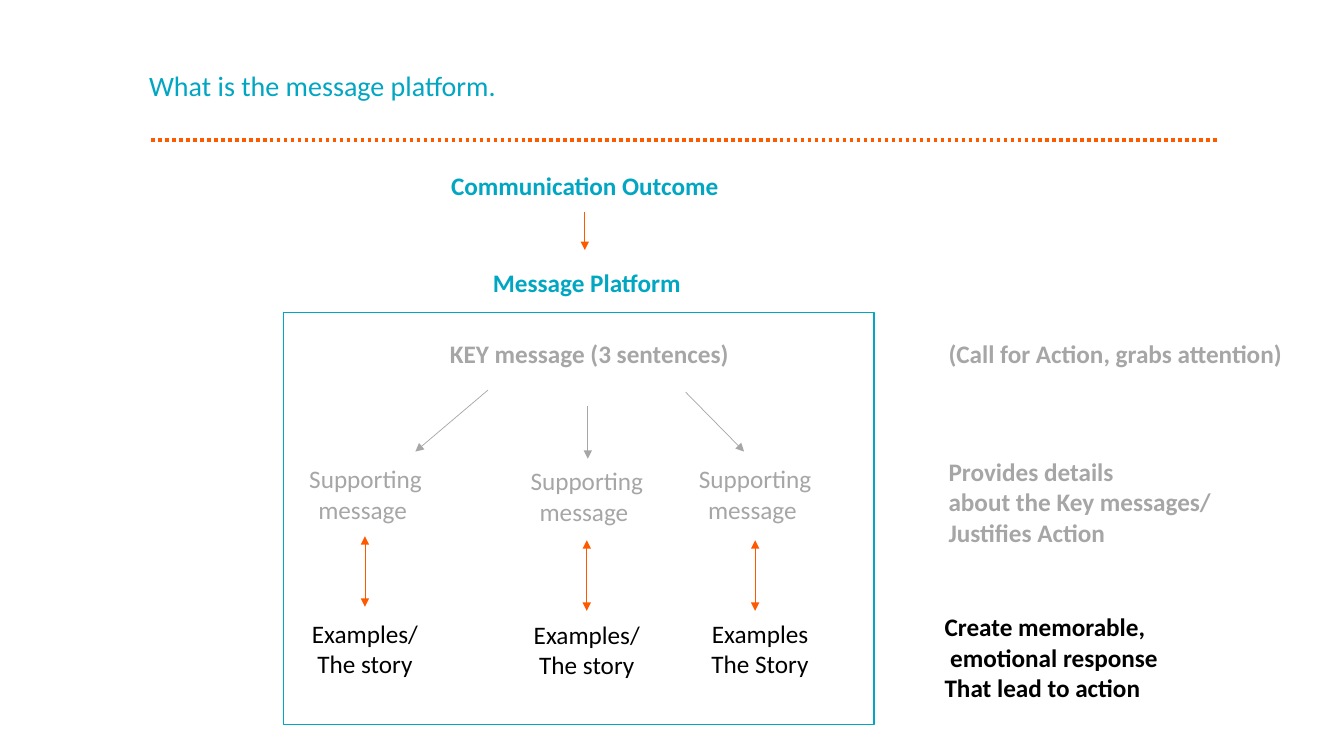
from pptx import Presentation
from pptx import util as u
from pptx.dml.color import RGBColor
from pptx.enum import dml, shapes, text
from pptx.oxml.ns import qn
from lxml import etree

PX = u.Inches(1) // 100
THEME = {
    "font": "Calibri",
    "teal": RGBColor.from_string("00A6C2"),
    "orange": RGBColor.from_string("FF5900"),
    "grey": RGBColor.from_string("A6A6A6"),
    "black": RGBColor.from_string("000000"),
    "title": u.Pt(20),
    "body": u.Pt(18),
}
CENTER, LEFT = text.PP_ALIGN.CENTER, text.PP_ALIGN.LEFT

deck = Presentation()
deck.slide_width, deck.slide_height = 1333 * PX, 750 * PX
slide = deck.slides.add_slide(deck.slide_layouts[6])


def add_label(wording, box, color, bold=False, align=CENTER, size="body", wrap=True):
    label = slide.shapes.add_textbox(*[side * PX for side in box])
    frame = label.text_frame
    frame.text = wording
    frame.word_wrap = wrap
    for paragraph in frame.paragraphs:
        paragraph.alignment = align
        for run in paragraph.runs:
            run.font.name = THEME["font"]
            run.font.size = THEME[size]
            run.font.bold = bold
            run.font.color.rgb = THEME[color]
    return frame


def add_line(start, end, color, width=0.5, arrowheads=()):
    line = slide.shapes.add_connector(
        shapes.MSO_CONNECTOR.STRAIGHT, *[place * PX for place in start + end])
    line.line.color.rgb = THEME[color]
    line.line.width = u.Pt(width)
    for arrowhead in arrowheads:
        etree.SubElement(line.line._get_or_add_ln(), qn("a:" + arrowhead), type="triangle")
    etree.SubElement(line._element.spPr, qn("a:effectLst"))
    return line


title = add_label("What is the message platform.", (138, 58, 731, 58), "teal",
                  align=LEFT, size="title")
title.vertical_anchor = text.MSO_ANCHOR.MIDDLE
title.paragraphs[0].line_spacing = 0.9
divider = add_line((150, 139), (1209, 139), "orange", 2.5)
divider.line.dash_style = dml.MSO_LINE.ROUND_DOT

for heading, box, color in [
    ("Communication Outcome", (330, 164, 500, 40), "teal"),
    ("Message Platform", (378, 260, 408, 40), "teal"),
    ("KEY message (3 sentences)", (415, 331, 339, 40), "grey"),
]:
    add_label(heading, box, color, bold=True)

add_line((580, 210), (580, 248), "orange", arrowheads=["tailEnd"])
for start, end in [((484, 387), (412, 448)), ((583, 403), (583, 455)),
                   ((680, 389), (738, 448))]:
    add_line(start, end, "grey", arrowheads=["tailEnd"])

for support_box, arrow_x, arrow_top, story, story_x, story_y in [
    ((264, 455, 197, 71), 362, 532, "Examples/\nThe story", 256, 608),
    ((493, 457, 178, 71), 582, 536, "Examples/\nThe story", 476, 609),
    ((660, 455, 178, 71), 749, 536, " Examples\n The Story", 645, 608),
]:
    add_label("Supporting message ", support_box, "grey")
    add_line((arrow_x, arrow_top), (arrow_x, arrow_top + 70), "orange",
             arrowheads=["headEnd", "tailEnd"])
    add_label(story, (story_x, story_y, 212, 71), "black")

platform = slide.shapes.add_shape(
    shapes.MSO_SHAPE.RECTANGLE, *[side * PX for side in (281, 310, 586, 409)])
platform.shadow.inherit = False
platform.fill.background()
platform.line.color.rgb = THEME["teal"]
platform.line.width = u.Pt(1)

for purpose, box, color in [
    ("(Call for Action, grabs attention)", (931, 331, 360, 40), "grey"),
    ("Provides details\nabout the Key messages/\nJustifies Action",
     (931, 448, 283, 101), "grey"),
    ("Create memorable,\n emotional response\nThat lead to action",
     (927, 602, 233, 101), "black"),
]:
    add_label(purpose, box, color, bold=True, align=LEFT, wrap=False)

deck.save("out.pptx")
